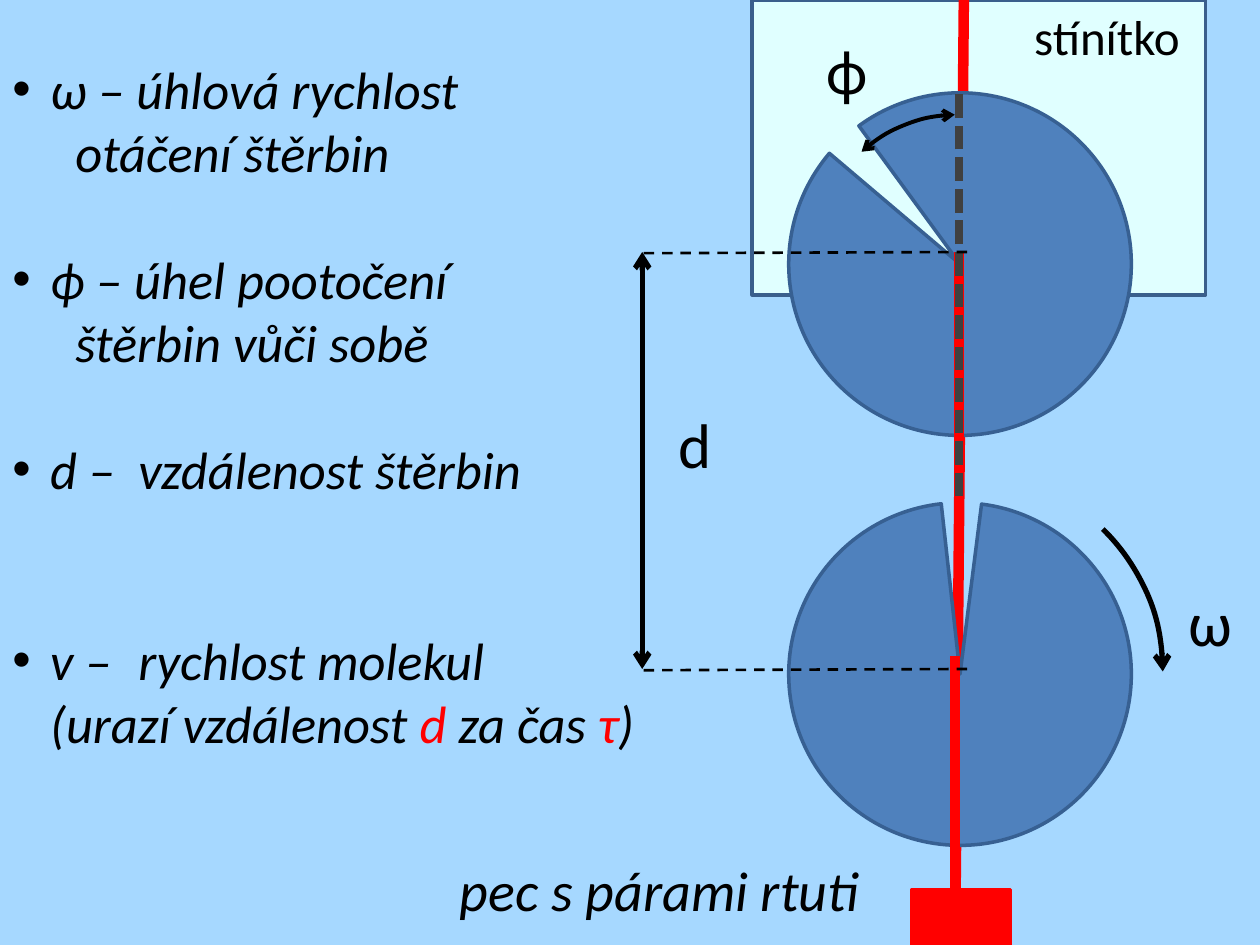
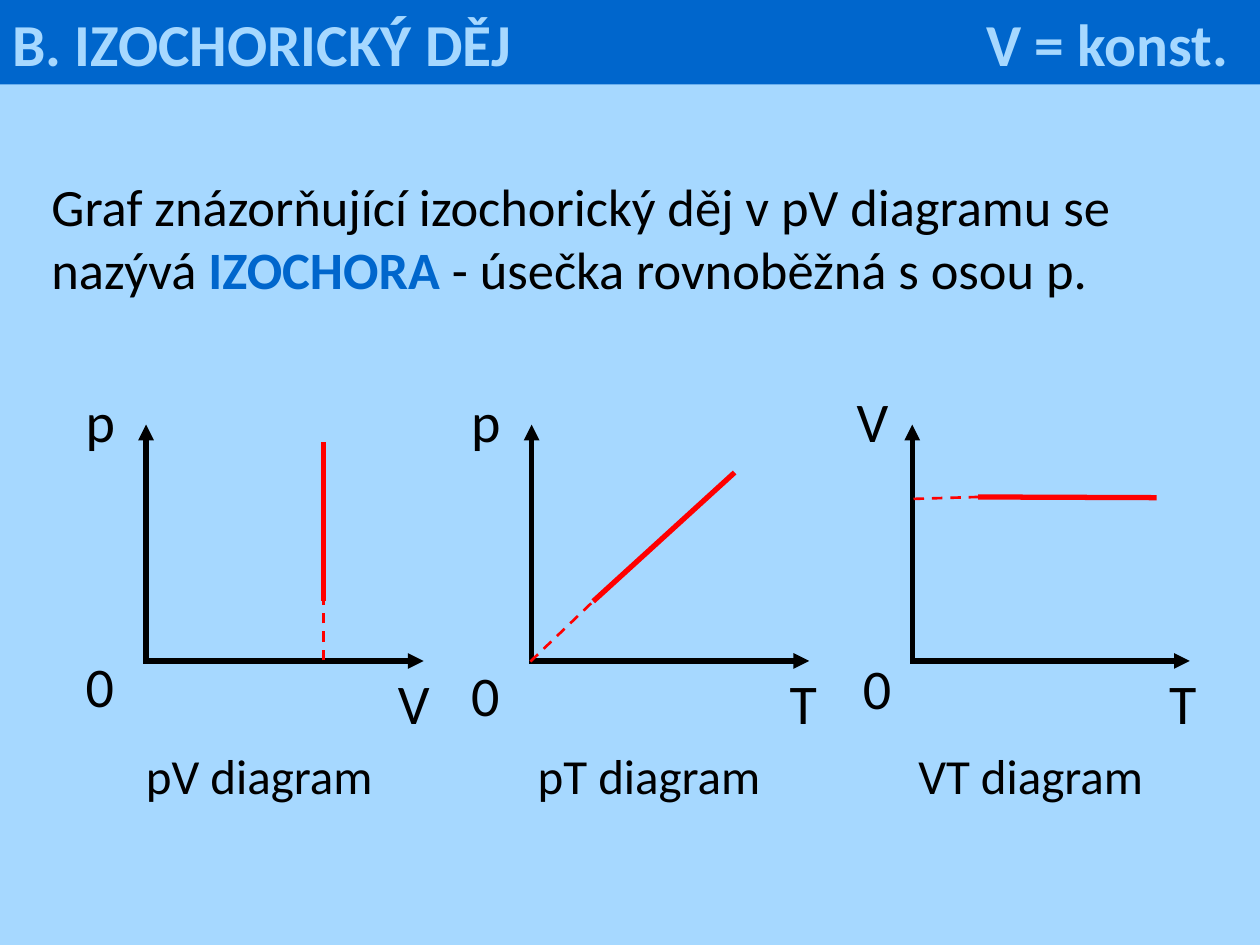
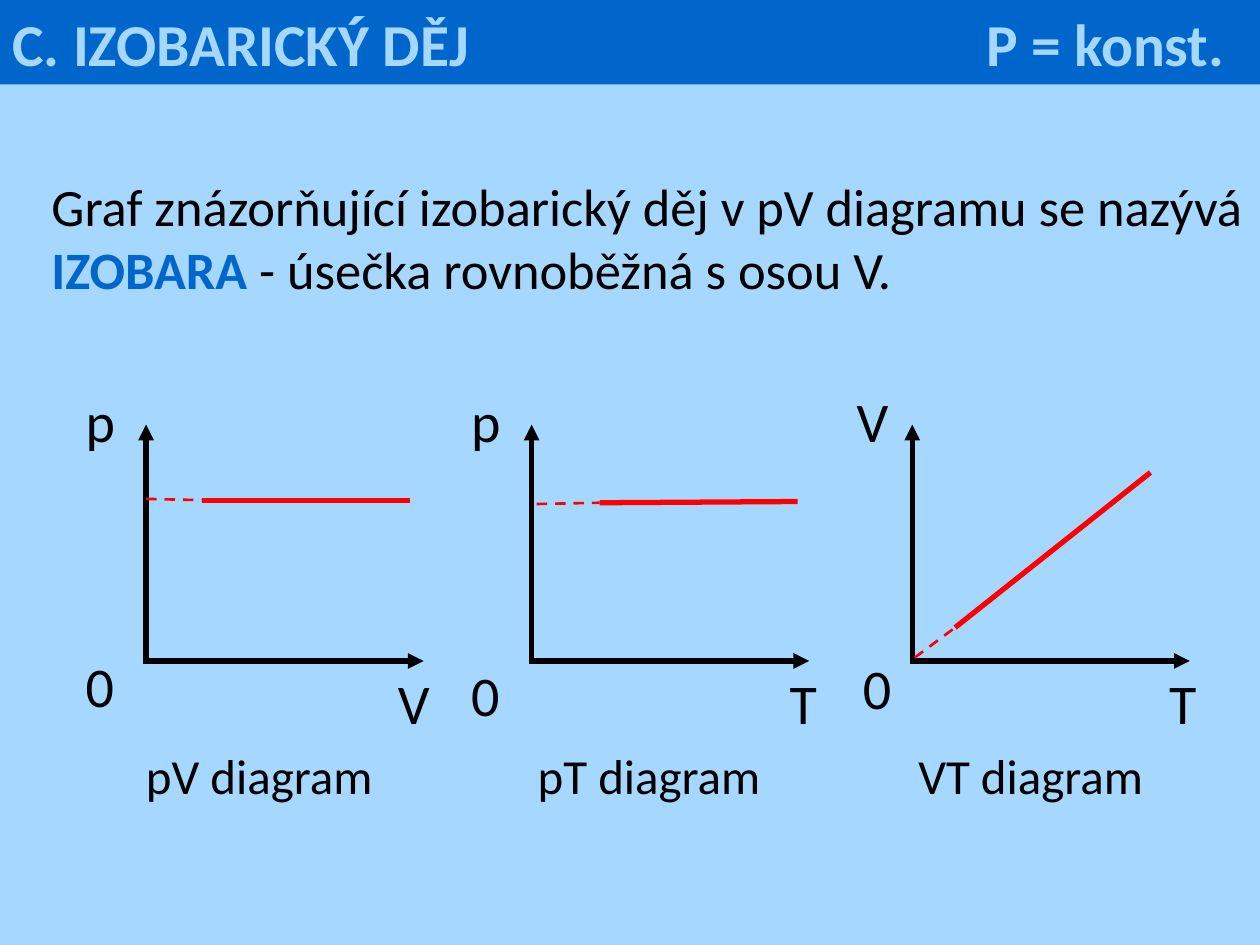
from dataclasses import dataclass

from lxml import etree
from pptx import Presentation
from pptx.dml.color import RGBColor
from pptx.enum.dml import MSO_LINE
from pptx.enum.shapes import MSO_CONNECTOR, MSO_SHAPE
from pptx.enum.text import MSO_ANCHOR, PP_ALIGN
from pptx.oxml.ns import qn
from pptx.util import Pt

RECTANGLE, PIE, ARC = MSO_SHAPE.RECTANGLE, MSO_SHAPE.PIE, MSO_SHAPE.ARC
STRAIGHT = MSO_CONNECTOR.STRAIGHT
DASH, SHORT_DASH = MSO_LINE.DASH, MSO_LINE.SQUARE_DOT
LEFT, MIDDLE = PP_ALIGN.LEFT, MSO_ANCHOR.MIDDLE


@dataclass(frozen=True)
class Theme:
    """Colours, font and type sizes of the deck."""
    font: str = "Calibri"
    background: str = "A6D8FF"
    band: str = "0066CC"
    ink: str = "000000"
    red: str = "FF0000"
    screen: str = "E0FFFF"
    screen_edge: str = "3A5F8C"
    disc: str = "4F81BD"
    disc_edge: str = "376092"
    axis_of_discs: str = "404040"
    title: int = 34
    body: int = 30
    caption: int = 28
    label: int = 32
    symbol: int = 36
    line_height: float = 36.6


@dataclass(frozen=True)
class Diagram:
    """Names and label places of one pair of axes."""
    vertical: str
    horizontal: str
    origin: float
    vertical_left: float
    horizontal_left: float
    zero_left: float
    zero_top: float
    caption_left: float


DIAGRAMS = (
    Diagram("p", "V", 83.5, 41.8, 220.3, 41.8, 368.6, 76.3),
    Diagram("p", "T", 303.8, 262.1, 444.2, 262.1, 373.7, 300.2),
    Diagram("V", "T", 521.3, 482.4, 661, 486, 370.1, 517.7),
)


class Deck:
    """Holds the theme and the current slide and draws elements on it."""

    def __init__(self, theme):
        """Start an empty deck with the shared background."""
        self.theme = theme
        self.deck = Presentation()
        self.deck.slide_width, self.deck.slide_height = Pt(720), Pt(540)
        fill = self.deck.slide_master.background.fill
        fill.solid()
        fill.fore_color.rgb = RGBColor.from_string(theme.background)
        self.page = None

    def new_page(self):
        """Add a blank slide and make it current."""
        self.page = self.deck.slides.add_slide(self.deck.slide_layouts[6])

    def stroke(self, item, color, width, dash=None, head=None, tail=None):
        """Style the line of a shape or connector."""
        item.line.color.rgb = RGBColor.from_string(color)
        item.line.width = Pt(width)
        if dash:
            item.line.dash_style = dash
        for tag, kind in (("a:headEnd", head), ("a:tailEnd", tail)):
            if kind:
                etree.SubElement(item.element.spPr.ln, qn(tag), type=kind)

    def line(self, start, end, color, width, **style):
        """Draw a straight line between two points."""
        connector = self.page.shapes.add_connector(
            STRAIGHT, *(Pt(value) for value in (*start, *end)))
        self.stroke(connector, color, width, **style)
        etree.SubElement(connector.element.spPr, qn("a:effectLst"))

    def shape(self, kind, box, fill=None, edge=None, width=2, angles=(),
              rotation=0, **style):
        """Draw a preset shape, filled or open."""
        shape = self.page.shapes.add_shape(kind, *(Pt(value) for value in box))
        shape.shadow.inherit = False
        shape.rotation = rotation
        for index, angle in enumerate(angles):
            shape.adjustments[index] = angle
        if fill:
            shape.fill.solid()
            shape.fill.fore_color.rgb = RGBColor.from_string(fill)
        else:
            shape.fill.background()
        if edge:
            self.stroke(shape, edge, width, **style)
        else:
            shape.line.fill.background()
        return shape

    def spans(self, para, parts, size, bold=False, italic=False):
        """Fill a paragraph with (text, colour, bold) parts."""
        colors, weights = [], []
        for index, (text, color, strong) in enumerate(parts):
            if index:
                para.add_run().text = text
            else:
                para.text = text
            added = len(para.runs) - len(colors)
            colors += [color] * added
            weights += [bold or strong] * added
        for span, color, weight in zip(para.runs, colors, weights):
            span.font.name = self.theme.font
            span.font.size = Pt(size)
            span.font.bold = weight
            span.font.italic = italic
            span.font.color.rgb = RGBColor.from_string(color)

    def text_box(self, box):
        """Add an empty wrapping text box and return its frame."""
        frame = self.page.shapes.add_textbox(
            *(Pt(value) for value in box)).text_frame
        frame.word_wrap = True
        return frame

    def text(self, box, text, size, italic=False):
        """Add one paragraph of plain text."""
        para = self.text_box(box).paragraphs[0]
        self.spans(para, [(text, self.theme.ink, False)], size, italic=italic)

    def bullets(self, box, items):
        """Add a bulleted list of (blank lines before, parts) items."""
        frame = self.text_box(box)
        for index, (gap, parts) in enumerate(items):
            para = frame.add_paragraph() if index else frame.paragraphs[0]
            para.space_before = Pt(gap * self.theme.line_height)
            self.spans(para, parts, self.theme.body, italic=True)
            properties = para._p.get_or_add_pPr()
            properties.set("marL", str(Pt(21.6)))
            properties.set("indent", str(-Pt(21.6)))
            etree.SubElement(properties, qn("a:buFont"), typeface="Arial")
            etree.SubElement(properties, qn("a:buChar"), char="•")

    def title_band(self, title, condition):
        """Draw the title band with the constant quantity at a tab stop."""
        band = self.shape(RECTANGLE, (0, 0, 720, 48.3), self.theme.band)
        frame = band.text_frame
        frame.word_wrap = True
        frame.vertical_anchor = MIDDLE
        para = frame.paragraphs[0]
        self.spans(para, [(f"{title}\t{condition}", self.theme.background, True)],
                   self.theme.title)
        para.alignment = LEFT
        tabs = etree.SubElement(para._p.get_or_add_pPr(), qn("a:tabLst"))
        etree.SubElement(tabs, qn("a:tab"), pos=str(Pt(556.5)), algn="l")

    def diagram(self, diagram, curve):
        """Draw labelled axes and a curve that is dashed up to its second point."""
        theme, origin = self.theme, diagram.origin
        self.line((origin, 379.4), (origin, 242.6), theme.ink, 3, tail="triangle")
        self.line((origin - 0.5, 377.7), (origin + 158.6, 377.7), theme.ink, 3,
                  tail="triangle")
        start, join, end = curve
        self.line(start, join, theme.red, 1.5, dash=DASH)
        self.line(join, end, theme.red, 3)
        for left, top, text in (
                (diagram.vertical_left, 217.4, diagram.vertical),
                (diagram.horizontal_left, 378.7, diagram.horizontal),
                (diagram.zero_left, diagram.zero_top, "0")):
            self.text((left, top, 24, 46), text, theme.label)
        name = f"{diagram.vertical}{diagram.horizontal} diagram"
        self.text((diagram.caption_left, 422.6, 150, 41), name, theme.caption)

    def process(self, title, condition, sentence, curves):
        """Build a slide on one process with its three diagrams."""
        theme = self.theme
        before, term, after = sentence
        self.new_page()
        self.title_band(title, condition)
        para = self.text_box((22.3, 95.8, 697.7, 80)).paragraphs[0]
        self.spans(para, [(before, theme.ink, False), (term, theme.band, True),
                          (after, theme.ink, False)], theme.body)
        for diagram, curve in zip(DIAGRAMS, curves):
            self.diagram(diagram, curve)

    def experiment(self):
        """Build the slide with the rotating slits."""
        theme = self.theme
        ink, red = theme.ink, theme.red
        self.new_page()
        self.shape(RECTANGLE, (429.8, 0, 259.2, 168.5), theme.screen,
                   theme.screen_edge)
        self.line((545.8, 540), (550.8, 0), red, 6)
        for top, rotation in ((53, 310.3), (287.3, 353.7)):
            self.shape(PIE, (450.7, top, 195.8, 195.8), theme.disc,
                       theme.disc_edge, angles=(170.109, 162), rotation=rotation)
        self.line((547.9, 290.9), (547.9, 144), red, 6)
        self.line((545.8, 540), (545.8, 375.1), red, 6)
        self.line((547.9, 283.7), (547.9, 53.3), theme.axis_of_discs, 4.5,
                  dash=SHORT_DASH)
        self.shape(ARC, (465.1, 65.5, 164.9, 164.9), edge=ink, width=2.25,
                   angles=(167.738, 192.158), rotation=308.4,
                   head="arrow", tail="arrow")
        self.line((367, 144), (367, 382.3), ink, 3, head="arrow", tail="arrow")
        for height in (144, 382.3):
            self.line((552.6, height), (367, height + 0.7), ink, 1.5, dash=DASH)
        for left, top, symbol in ((380.9, 228.2, "d"), (465.1, 14.4, "ϕ"),
                                  (671.8, 329.8, "ω")):
            self.text((left, top, 24.5, 51), symbol, theme.symbol)
        self.shape(ARC, (437, 270, 227.5, 227.5), edge=ink, width=3,
                   angles=(188.592, 0), tail="arrow")
        self.bullets((0, 28.8, 720, 443.5), (
            (0, [("ω – úhlová rychlost\n\totáčení štěrbin", ink, False)]),
            (1, [("ϕ – úhel pootočení\n\tštěrbin vůči sobě", ink, False)]),
            (1, [("d – \tvzdálenost štěrbin", ink, False)]),
            (2, [("v – \trychlost molekul\n(urazí vzdálenost ", ink, False),
                 ("d", red, False), (" za čas ", ink, False),
                 ("τ", red, False), (")", ink, False)])))
        self.shape(RECTANGLE, (521.3, 508.3, 56.2, 31.7), red, red)
        self.text((583.9, 0, 105.1, 41), "stínítko", theme.caption)
        self.text((255.6, 485.3, 260, 46), "pec s párami rtuti", theme.label,
                  italic=True)


def main():
    """Build the three slides and save the deck."""
    deck = Deck(Theme())
    deck.experiment()
    deck.process(
        "B. IZOCHORICKÝ DĚJ", "V = konst.",
        ("Graf znázorňující izochorický děj v pV diagramu se nazývá ",
         "IZOCHORA", " - úsečka rovnoběžná s osou p."),
        (((185, 377.3), (185, 343.4), (185, 252.7)),
         ((303.1, 378), (339, 343.6), (419.8, 270)),
         ((522, 285.1), (559, 284), (661, 284.4))))
    deck.process(
        "C. IZOBARICKÝ DĚJ", "P = konst.",
        ("Graf znázorňující izobarický děj v pV diagramu se nazývá ",
         "IZOBARA", " - úsečka rovnoběžná s osou V."),
        (((83.5, 285.1), (115.2, 285.8), (234, 285.8)),
         ((306.7, 288), (342.7, 287.3), (455.8, 286.6)),
         ((522.7, 375.8), (545.8, 358.6), (657.4, 270))))
    deck.deck.save("out.pptx")


if __name__ == "__main__":
    main()
